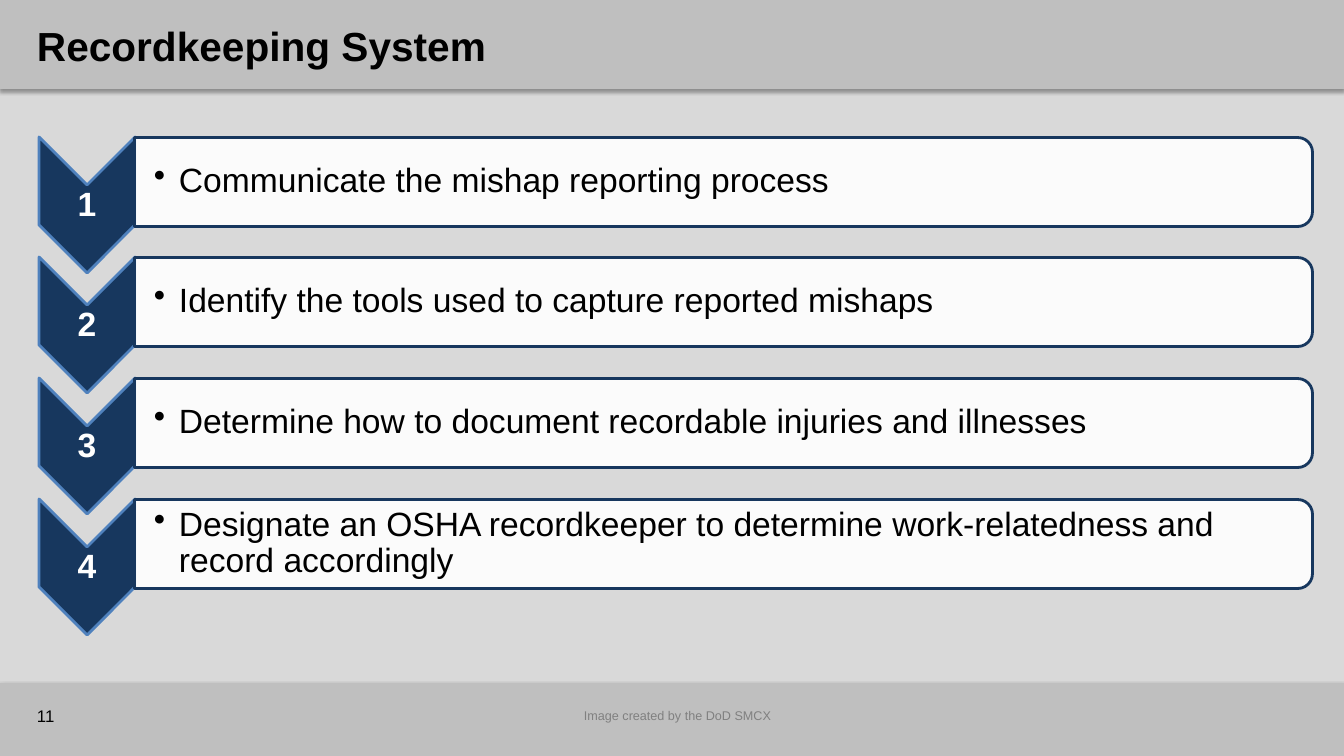
from dataclasses import dataclass

from lxml.etree import SubElement
from pptx import Presentation
from pptx.dml.color import RGBColor
from pptx.enum.shapes import MSO_SHAPE as Shape
from pptx.enum.text import MSO_ANCHOR as Anchor, PP_ALIGN as Align
from pptx.oxml.ns import qn
from pptx.util import Emu, Pt

PX = 914400 / 100.8


@dataclass(frozen=True)
class Theme:
    font: str = "Arial"
    background: str = "D9D9D9"
    bar: str = "BFBFBF"
    navy: str = "17375E"
    blue: str = "4F81BD"
    white: str = "FFFFFF"
    black: str = "000000"
    grey: str = "808080"
    title_size: int = 29
    body_size: int = 24
    number_size: int = 12
    caption_size: int = 9
    outline: int = 2


@dataclass(frozen=True)
class Box:
    left: int
    top: int
    width: int
    height: int

    def down(self, offset: int):
        return Box(self.left, self.top + offset, self.width, self.height)

    def emu(self) -> list[Emu]:
        return [px(v) for v in (self.left, self.top, self.width, self.height)]


@dataclass(frozen=True)
class Label:
    text: str
    box: Box
    size: int
    color: str = "000000"
    bold: bool = False
    align: Align = Align.LEFT
    anchor: Anchor = Anchor.MIDDLE
    insets: tuple[int, int, int, int] = (10, 5, 10, 5)
    spacing: float = 1.0
    bullet_indent: int = 0


THEME = Theme()
STEPS = [
    "Communicate the mishap reporting process",
    "Identify the tools used to capture reported mishaps",
    "Determine how to document recordable injuries and illnesses",
    "Designate an OSHA recordkeeper to determine work-relatedness and record accordingly",
]
STEPS_SPAN = 362
BARS = [Box(0, 683, 1344, 73), Box(0, 0, 1344, 89)]
CHEVRON = Box(19, 157, 136, 96)
STEP_NUMBER = Box(39, 185, 96, 41)
PANEL = Box(679, -407, 89, 1178)
STEP_TEXT = Box(135, 142, 1173, 79)


def px(value: int) -> Emu:
    return Emu(round(value * PX))


def rgb(color: str) -> RGBColor:
    return RGBColor.from_string(color)


def add_block(slide, kind: Shape, box: Box, fill: str, line: str = "", rotation: int = 0):
    sp = slide.shapes.add_shape(kind, *box.emu())
    sp.shadow.inherit = False
    sp.rotation = rotation
    sp.fill.solid()
    sp.fill.fore_color.rgb = rgb(fill)
    if line:
        sp.line.color.rgb = rgb(line)
        sp.line.width = Pt(THEME.outline)
    else:
        sp.line.fill.background()
    return sp


def set_alpha(color_element, percent: int) -> None:
    SubElement(color_element, qn("a:alpha"), val=str(percent * 1000))


def add_bar(slide, box: Box) -> None:
    sp = add_block(slide, Shape.RECTANGLE, box, THEME.bar)
    effects = sp._element.spPr.find(qn("a:effectLst"))
    shadow = SubElement(effects, qn("a:outerShdw"), blurRad=str(Pt(3.1)),
                        dist=str(Pt(1.8)), dir="5400000", algn="t", rotWithShape="0")
    set_alpha(SubElement(shadow, qn("a:srgbClr"), val=THEME.black), 35)


def add_label(slide, label: Label) -> None:
    tf = slide.shapes.add_textbox(*label.box.emu()).text_frame
    tf.word_wrap = True
    tf.vertical_anchor = label.anchor
    tf.margin_left, tf.margin_top, tf.margin_right, tf.margin_bottom = map(px, label.insets)
    tf.text = label.text
    p = tf.paragraphs[0]
    if label.bullet_indent:
        pPr = p._p.get_or_add_pPr()
        pPr.set("marL", str(px(label.bullet_indent)))
        pPr.set("indent", str(px(-label.bullet_indent)))
        SubElement(pPr, qn("a:buChar"), char="•")
    p.alignment = label.align
    p.line_spacing = label.spacing
    font = p.runs[0].font
    font.name = THEME.font
    font.size = Pt(label.size)
    font.bold = label.bold
    font.color.rgb = rgb(label.color)


def add_step(slide, index: int, text: str) -> None:
    offset = STEPS_SPAN * index // (len(STEPS) - 1)
    add_block(slide, Shape.CHEVRON, CHEVRON.down(offset), THEME.navy, THEME.blue, 90)
    add_label(slide, Label(str(index + 1), STEP_NUMBER.down(offset), THEME.body_size,
                           THEME.white, True, Align.CENTER, insets=(2, 2, 2, 2), spacing=0.9))
    panel = add_block(slide, Shape.ROUND_2_SAME_RECTANGLE, PANEL.down(offset),
                      THEME.white, THEME.navy, 90)
    set_alpha(panel._element.spPr.find(qn("a:solidFill"))[0], 90)
    add_label(slide, Label(text, STEP_TEXT.down(offset), THEME.body_size, THEME.black,
                           insets=(19, 2, 2, 2), spacing=0.9, bullet_indent=25))


def main() -> None:
    prs = Presentation()
    prs.slide_width, prs.slide_height = px(1344), px(756)
    slide = prs.slides.add_slide(prs.slide_layouts[6])
    slide.background.fill.solid()
    slide.background.fill.fore_color.rgb = rgb(THEME.background)
    for box in BARS:
        add_bar(slide, box)
    add_label(slide, Label("Recordkeeping System", Box(27, 14, 1303, 62),
                           THEME.title_size, THEME.black, True))
    add_label(slide, Label("11", Box(27, 696, 235, 40), THEME.number_size, THEME.black))
    for index, text in enumerate(STEPS):
        add_step(slide, index, text)
    add_label(slide, Label("Image created by the DoD SMCX", Box(409, 703, 537, 25),
                           THEME.caption_size, THEME.grey, align=Align.CENTER,
                           anchor=Anchor.TOP))
    prs.save("out.pptx")


if __name__ == "__main__":
    main()
